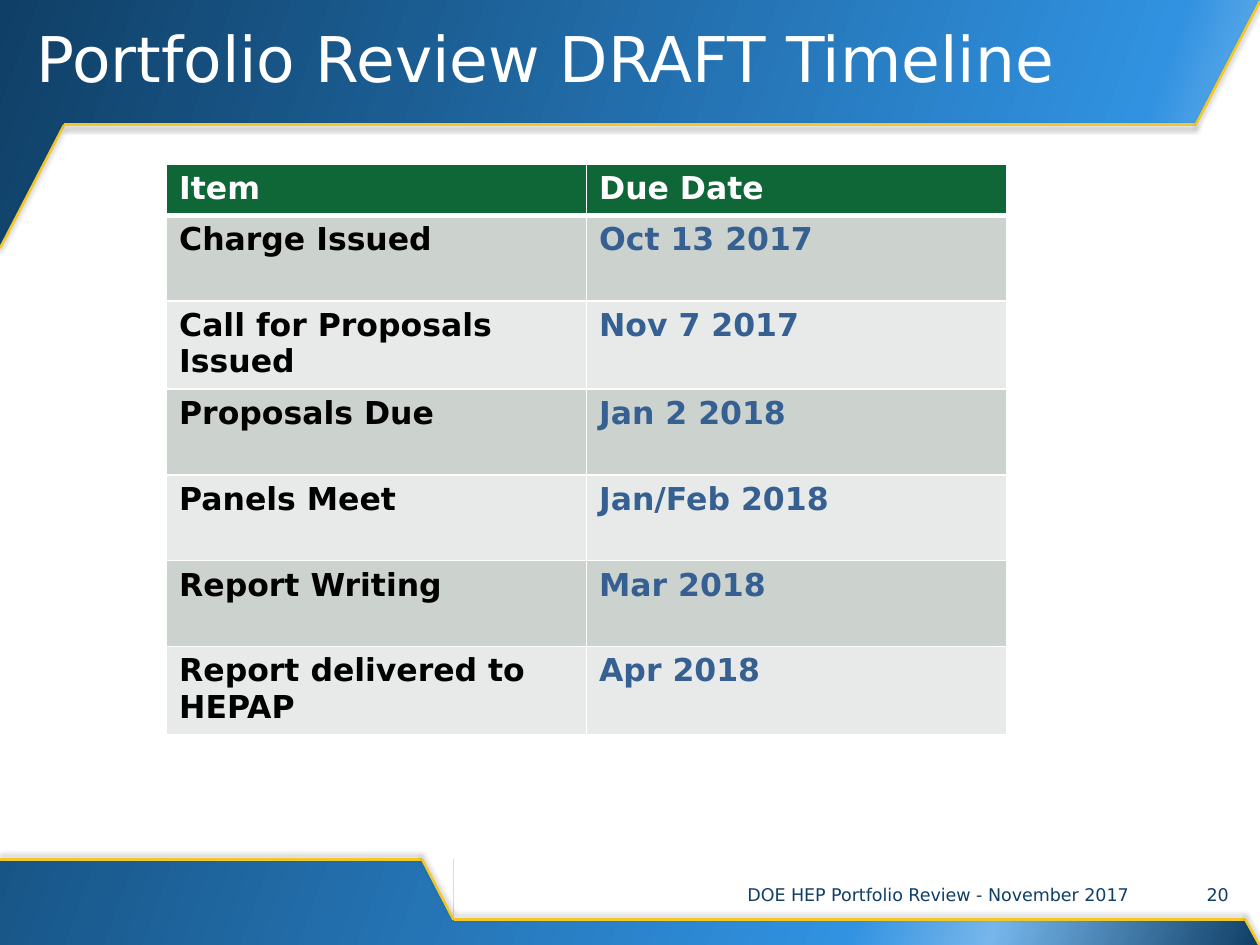
from lxml.etree import SubElement
from pptx import Presentation
from pptx.dml.color import RGBColor
from pptx.enum.shapes import MSO_CONNECTOR, MSO_SHAPE
from pptx.enum.text import MSO_ANCHOR, MSO_AUTO_SIZE, PP_ALIGN
from pptx.oxml.ns import qn
from pptx.util import Pt

NAVY = RGBColor(0x0F, 0x3F, 0x66)
BLUE = RGBColor(0x31, 0x92, 0xE1)
SKY = RGBColor(0x76, 0xB6, 0xEB)
GOLD = RGBColor(0xF3, 0xC7, 0x27)
GREEN = RGBColor(0x0F, 0x66, 0x36)
DATE_BLUE = RGBColor(0x37, 0x60, 0x92)
BAND_DARK = RGBColor(0xCC, 0xD3, 0xCE)
BAND_LIGHT = RGBColor(0xE7, 0xEA, 0xE8)
WHITE = RGBColor(0xFF, 0xFF, 0xFF)
BLACK = RGBColor(0, 0, 0)

WIDTH, HEIGHT = 720, 540
SLANT_WIDTH, SLANT_HEIGHT = 36.7, 70.6
HEADER_BOTTOM = 71.3
HEADER_RIGHT = WIDTH - SLANT_WIDTH
FOOTER_TOP, FOOTER_BOTTOM = 491, 525.6
FOOTER_STEP = 259.2

TIMELINE = [
    ("Item", "Due Date"),
    ("Charge Issued", "Oct 13 2017"),
    ("Call for Proposals Issued", "Nov 7 2017"),
    ("Proposals Due", "Jan 2 2018"),
    ("Panels Meet", "Jan/Feb 2018"),
    ("Report Writing", "Mar 2018"),
    ("Report delivered to HEPAP", "Apr 2018"),
]


class SlideBuilder:
    font_name = "DejaVu Sans"

    def __init__(self, page):
        self.page = page

    def background(self, stops, angle):
        fill = self.page.background.fill
        fill.gradient()
        fill.gradient_angle = 360 - angle
        stop_list = self.page.element.find(".//" + qn("a:gsLst"))
        for stop in list(stop_list):
            stop_list.remove(stop)
        for position, color in stops:
            stop = SubElement(stop_list, qn("a:gs"), pos=str(position * 1000))
            SubElement(stop, qn("a:srgbClr"), val=str(color))

    def place(self, item, left, top, width, height):
        item.left, item.top = Pt(left), Pt(top)
        item.width, item.height = Pt(width), Pt(height)

    def panel(self, kind, left, top, width, height, rotation=0, flip=False):
        shape = self.page.shapes.add_shape(
            kind, Pt(left), Pt(top), Pt(width), Pt(height))
        shape.shadow.inherit = False
        shape.fill.solid()
        shape.fill.fore_color.rgb = WHITE
        shape.line.fill.background()
        shape.rotation = rotation
        if flip:
            shape.element.spPr.find(qn("a:xfrm")).set("flipH", "1")

    def edge(self, start, end, shadow_angle):
        line = self.page.shapes.add_connector(
            MSO_CONNECTOR.STRAIGHT, *map(Pt, start + end))
        line.line.color.rgb = GOLD
        line.line.width = Pt(1.5)
        effects = SubElement(line.element.spPr, qn("a:effectLst"))
        shadow = SubElement(
            effects, qn("a:outerShdw"), blurRad=str(Pt(3)), dist=str(Pt(2)),
            dir=str(shadow_angle * 60000), rotWithShape="0")
        color = SubElement(shadow, qn("a:srgbClr"), val=str(BLACK))
        SubElement(color, qn("a:alpha"), val="28000")

    def set_text(self, frame, text, size, color, align=PP_ALIGN.LEFT, bold=False):
        frame.text = text
        para = frame.paragraphs[0]
        para.alignment = align
        for span in para.runs:
            span.font.name = self.font_name
            span.font.size = Pt(size)
            span.font.bold = bold
            span.font.color.rgb = color

    def title(self, text, left, top, width, height):
        title = self.page.shapes.title
        self.place(title, left, top, width, height)
        frame = title.text_frame
        self.set_text(frame, text, 36, WHITE)
        frame.auto_size = MSO_AUTO_SIZE.NONE
        frame.vertical_anchor = MSO_ANCHOR.MIDDLE
        frame.paragraphs[0].line_spacing = 0.9

    def footer(self, text, left, width, align):
        box = self.page.shapes.add_textbox(
            Pt(left), Pt(496.8), Pt(width), Pt(28.8))
        box.text_frame.word_wrap = True
        box.text_frame.vertical_anchor = MSO_ANCHOR.MIDDLE
        self.set_text(box.text_frame, text, 10, NAVY, align)

    def borders(self, cell, top, bottom):
        properties = cell._tc.get_or_add_tcPr()
        for side, width in (("L", 1), ("R", 1), ("T", top), ("B", bottom)):
            border = SubElement(properties, qn("a:ln" + side), w=str(Pt(width)))
            fill = SubElement(border, qn("a:solidFill"))
            SubElement(fill, qn("a:srgbClr"), val=str(WHITE))

    def table(self, rows, left, top, column_width, header_height, row_height):
        columns = len(rows[0])
        height = header_height + row_height * (len(rows) - 1)
        table = self.page.shapes.add_table(
            len(rows), columns, Pt(left), Pt(top),
            Pt(column_width * columns), Pt(height)).table
        table.horz_banding = False
        for column in table.columns:
            column.width = Pt(column_width)
        for row_index, values in enumerate(rows):
            header = row_index == 0
            table.rows[row_index].height = Pt(header_height if header else row_height)
            if header:
                fill, colors = GREEN, (WHITE, WHITE)
            else:
                fill = BAND_DARK if row_index % 2 else BAND_LIGHT
                colors = (BLACK, DATE_BLUE)
            for column_index, text in enumerate(values):
                cell = table.cell(row_index, column_index)
                self.borders(cell, 3 if row_index == 1 else 1, 3 if header else 1)
                cell.fill.solid()
                cell.fill.fore_color.rgb = fill
                self.set_text(cell.text_frame, text, 18, colors[column_index], bold=True)


def main():
    deck = Presentation()
    deck.slide_width, deck.slide_height = Pt(WIDTH), Pt(HEIGHT)
    builder = SlideBuilder(deck.slides.add_slide(deck.slide_layouts[5]))
    builder.background([(0, NAVY), (74, BLUE), (83, SKY), (100, NAVY)], 20)

    for area in [
        (SLANT_WIDTH, HEADER_BOTTOM, HEADER_RIGHT, 409),
        (FOOTER_STEP, 480.2, WIDTH - FOOTER_STEP, 45.4),
        (0, 140.4, WIDTH, 350.6),
    ]:
        builder.panel(MSO_SHAPE.RECTANGLE, *area)
    for left, top, rotation, flip in [
        (HEADER_RIGHT, 470, 180, False),
        (FOOTER_STEP - SLANT_WIDTH, FOOTER_BOTTOM - SLANT_HEIGHT, 180, False),
        (HEADER_RIGHT, HEADER_BOTTOM - SLANT_HEIGHT, 0, True),
        (0, HEADER_BOTTOM, 0, True),
    ]:
        builder.panel(MSO_SHAPE.RIGHT_TRIANGLE, left, top,
                      SLANT_WIDTH, SLANT_HEIGHT, rotation, flip)

    header_edge = [
        (0, HEADER_BOTTOM + SLANT_HEIGHT), (SLANT_WIDTH, HEADER_BOTTOM),
        (HEADER_RIGHT, HEADER_BOTTOM), (WIDTH, HEADER_BOTTOM - SLANT_HEIGHT),
    ]
    footer_edge = [
        (0, FOOTER_TOP), (241.2, FOOTER_TOP), (FOOTER_STEP, FOOTER_BOTTOM),
        (711.7, FOOTER_BOTTOM), (WIDTH, 540.6),
    ]
    for points, shadow_angle in ((header_edge, 90), (footer_edge, 270)):
        for start, end in zip(points, points[1:]):
            builder.edge(start, end, shadow_angle)

    builder.title("Portfolio Review DRAFT Timeline", 13.7, 0, 696.2, HEADER_BOTTOM)
    builder.footer("DOE HEP Portfolio Review - November 2017", 396.7, 278.6, PP_ALIGN.CENTER)
    builder.footer("20", 675.3, 33.9, PP_ALIGN.RIGHT)
    builder.table(TIMELINE, 95.2, 93.8, 240, 29.2, 49)
    deck.save("out.pptx")


if __name__ == "__main__":
    main()
